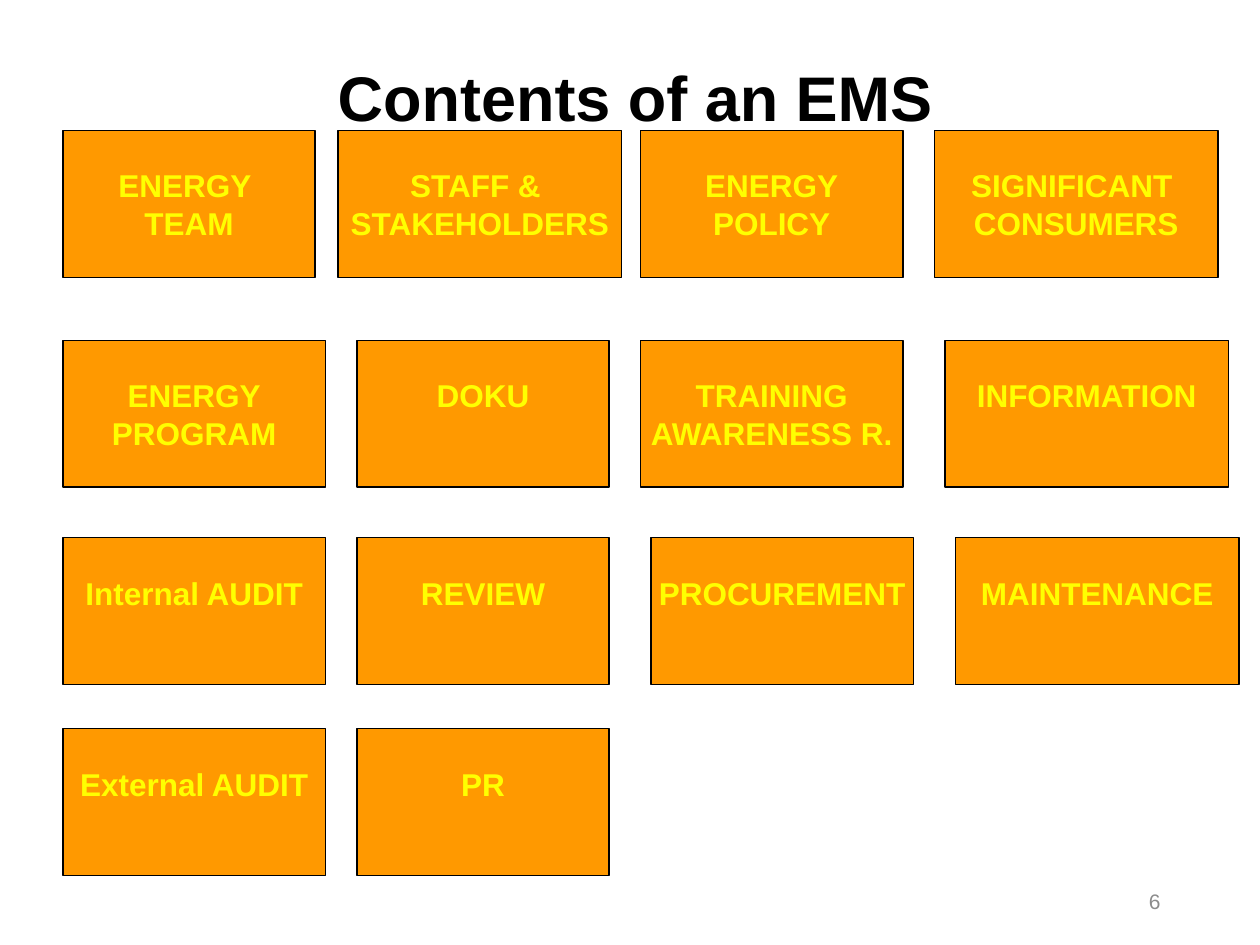
from dataclasses import dataclass

from pptx import Presentation
from pptx.dml.color import RGBColor
from pptx.enum.shapes import MSO_SHAPE
from pptx.enum.text import MSO_ANCHOR, PP_ALIGN
from pptx.util import Inches, Pt


@dataclass(frozen=True)
class Theme:
    font: str = "Arial"
    card_fill: RGBColor = RGBColor(0xFF, 0x99, 0x00)
    card_text: RGBColor = RGBColor(0xFF, 0xFF, 0x00)
    ink: RGBColor = RGBColor(0x00, 0x00, 0x00)
    muted: RGBColor = RGBColor(0x8C, 0x8C, 0x8C)
    title_size: Pt = Pt(36)
    card_size: Pt = Pt(18)
    number_size: Pt = Pt(12)
    border: Pt = Pt(0.75)


THEME = Theme()
SLIDE_WIDTH, SLIDE_HEIGHT = Inches(10), Inches(7.5)
COLUMNS, ROWS = 120, 90
CARD_ROWS = 14
SINGLE_LINE_INSET = Inches(0.34)

TITLE_BOX = (6, 4.4, 109, 9.5)
NUMBER_BOX = (84.7, 83.4, 27, 4.8)

CARD_GRID = [
    (12.4, [(6, 24, "ENERGY \nTEAM"), (32.2, 27, "STAFF & \nSTAKEHOLDERS"),
            (61, 25, "ENERGY\nPOLICY"), (89, 27, "SIGNIFICANT \nCONSUMERS")]),
    (32.4, [(6, 25, "ENERGY\nPROGRAM"), (34, 24, "DOKU"),
            (61, 25, "TRAINING\nAWARENESS R."), (90, 27, "INFORMATION")]),
    (51.2, [(6, 25, "Internal AUDIT"), (34, 24, "REVIEW"),
            (62, 25, "PROCUREMENT"), (91, 27, "MAINTENANCE")]),
    (69.4, [(6, 25, "External AUDIT"), (34, 24, "PR")]),
]


def place(box):
    left, top, width, height = box
    column, row = SLIDE_WIDTH / COLUMNS, SLIDE_HEIGHT / ROWS
    return (round(left * column), round(top * row),
            round(width * column), round(height * row))


def write_text(shape, text, size, color, bold, alignment):
    frame = shape.text_frame
    frame.text = text
    frame.vertical_anchor = MSO_ANCHOR.MIDDLE
    for paragraph in frame.paragraphs:
        paragraph.alignment = alignment
        for run in paragraph.runs:
            run.font.name = THEME.font
            run.font.size = size
            run.font.bold = bold
            run.font.color.rgb = color
    return frame


def add_card(slide, box, label):
    card = slide.shapes.add_shape(MSO_SHAPE.RECTANGLE, *place(box))
    card.shadow.inherit = False
    card.fill.solid()
    card.fill.fore_color.rgb = THEME.card_fill
    card.line.color.rgb = THEME.ink
    card.line.width = THEME.border
    frame = write_text(card, label, THEME.card_size, THEME.card_text, True, PP_ALIGN.CENTER)
    frame.word_wrap = False
    if len(frame.paragraphs) == 1:
        frame.margin_bottom = SINGLE_LINE_INSET


def add_cards(slide, grid):
    for top, cards in grid:
        for left, width, label in cards:
            add_card(slide, (left, top, width, CARD_ROWS), label)


def add_title(slide, box, text):
    title = slide.shapes.add_textbox(*place(box))
    frame = write_text(title, text, THEME.title_size, THEME.ink, True, PP_ALIGN.CENTER)
    frame.word_wrap = True
    frame.margin_left = frame.margin_right = 0
    frame.margin_top = frame.margin_bottom = 0


def add_page_number(slide, box, text):
    number = slide.shapes.add_textbox(*place(box))
    frame = write_text(number, text, THEME.number_size, THEME.muted, False, PP_ALIGN.RIGHT)
    frame.word_wrap = True


def main():
    presentation = Presentation()
    presentation.slide_width = SLIDE_WIDTH
    presentation.slide_height = SLIDE_HEIGHT
    slide = presentation.slides.add_slide(presentation.slide_layouts[6])
    add_cards(slide, CARD_GRID)
    add_title(slide, TITLE_BOX, "Contents of an EMS")
    add_page_number(slide, NUMBER_BOX, "6")
    presentation.save("out.pptx")


if __name__ == "__main__":
    main()
